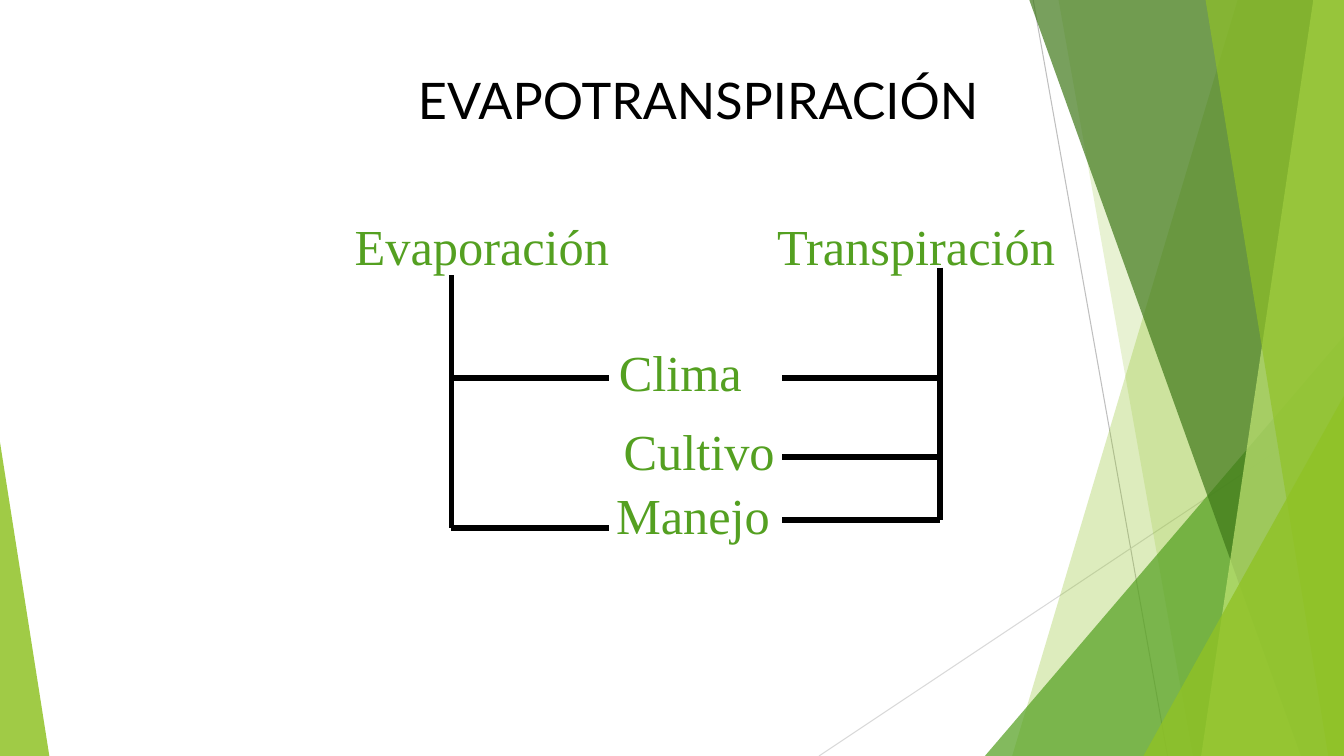
import pptx
import pptx.dml.color
import pptx.enum.shapes
import pptx.enum.text
import pptx.oxml.ns
import pptx.util
from lxml import etree

RGBColor = pptx.dml.color.RGBColor
LIME = RGBColor(0x90, 0xC2, 0x26)
PALE_LIME = RGBColor(0xC0, 0xE4, 0x74)
GREEN = RGBColor(0x54, 0xA0, 0x21)
DARK_GREEN = RGBColor(0x3F, 0x78, 0x19)
SILVER = RGBColor(0xBF, 0xBF, 0xBF)
LIGHT_GRAY = RGBColor(0xD9, 0xD9, 0xD9)
BLACK = RGBColor(0, 0, 0)

PX = 9525  # EMU per px, 96 px to the inch
WIDTH, HEIGHT = 1280, 720

deck = pptx.Presentation()
deck.slide_width, deck.slide_height = WIDTH * PX, HEIGHT * PX
page = deck.slides.add_slide(deck.slide_layouts[6])


def add_line(start_x, start_y, end_x, end_y, color, weight):
    line = page.shapes.add_connector(
        pptx.enum.shapes.MSO_CONNECTOR.STRAIGHT,
        start_x * PX, start_y * PX, end_x * PX, end_y * PX)
    line.line.color.rgb = color
    line.line.width = pptx.util.Pt(weight)
    etree.SubElement(line._element.spPr, pptx.oxml.ns.qn("a:effectLst"))


def paint(shape, color, opacity):
    """Fill without outline or shadow; opacity is in percent."""
    shape.shadow.inherit = False
    shape.line.fill.background()
    shape.fill.solid()
    shape.fill.fore_color.rgb = color
    color_element = shape._element.spPr.find(".//" + pptx.oxml.ns.qn("a:srgbClr"))
    alpha = etree.SubElement(color_element, pptx.oxml.ns.qn("a:alpha"))
    alpha.set("val", str(opacity * 1000))


# Background facets, from back to front
add_line(984, 0, 1112, HEIGHT, SILVER, 0.75)
add_line(WIDTH, 387, 780, HEIGHT, LIGHT_GRAY, 0.75)

# Bands run to the right edge: top x, bottom x. Triangles: left, top, width, apex.
facets = [
    ("band", (1179, 964), LIME, 30),
    ("band", (1008, 1136), LIME, 20),
    ("triangle", (938, 320, 342, 1), GREEN, 72),
    ("band", (980, 1239), DARK_GREEN, 70),
    ("band", (1251, 1144), PALE_LIME, 70),
    ("band", (1148, 1265), LIME, 65),
    ("triangle", (1089, 377, 191, 1), LIME, 80),
    ("triangle", (0, 421, 47, 0), LIME, 85),
]
for kind, place, color, opacity in facets:
    if kind == "band":
        top_x, bottom_x = place
        outline = page.shapes.build_freeform(top_x, -1, scale=PX)
        outline.add_line_segments(
            [(WIDTH, -1), (WIDTH, HEIGHT), (bottom_x, HEIGHT)], close=True)
        facet = outline.convert_to_shape()
    else:
        left, top, width, apex = place
        facet = page.shapes.add_shape(
            pptx.enum.shapes.MSO_SHAPE.ISOSCELES_TRIANGLE,
            left * PX, top * PX, width * PX, (HEIGHT - top) * PX)
        facet.adjustments[0] = apex
    paint(facet, color, opacity)

# Title and terms: text, left, top, width, font, color
labels = [
    ("EVAPOTRANSPIRACIÓN", 205, 67, 920, "Lato", BLACK),
    ("Transpiración", 655, 206, 435, "Times New Roman", GREEN),
    ("Clima", 188, 326, 920, "Times New Roman", GREEN),
    ("Evaporación", 205, 206, 508, "Times New Roman", GREEN),
    ("Cultivo", 206, 401, 920, "Times New Roman", GREEN),
    ("Manejo", 200, 462, 920, "Times New Roman", GREEN),
]
for text, left, top, width, font, color in labels:
    box = page.shapes.add_textbox(left * PX, top * PX, width * PX, 56 * PX)
    box.text_frame.word_wrap = True
    box.text_frame.vertical_anchor = pptx.enum.text.MSO_ANCHOR.MIDDLE
    para = box.text_frame.paragraphs[0]
    para.alignment = pptx.enum.text.PP_ALIGN.CENTER
    span = para.add_run()
    span.text = text
    span.font.name = font
    span.font.size = pptx.util.Pt(36)
    span.font.color.rgb = color

# Each bracket: stem x, inner end x, stem top, heights of its branches
brackets = [
    (430, 580, 262, [360, 503]),
    (895, 745, 255, [360, 435, 495]),
]
for stem_x, inner_x, stem_top, branches in brackets:
    add_line(stem_x, stem_top, stem_x, branches[-1], BLACK, 4)
    for branch_y in branches:
        add_line(min(stem_x, inner_x), branch_y, max(stem_x, inner_x), branch_y, BLACK, 4)

deck.save("out.pptx")
